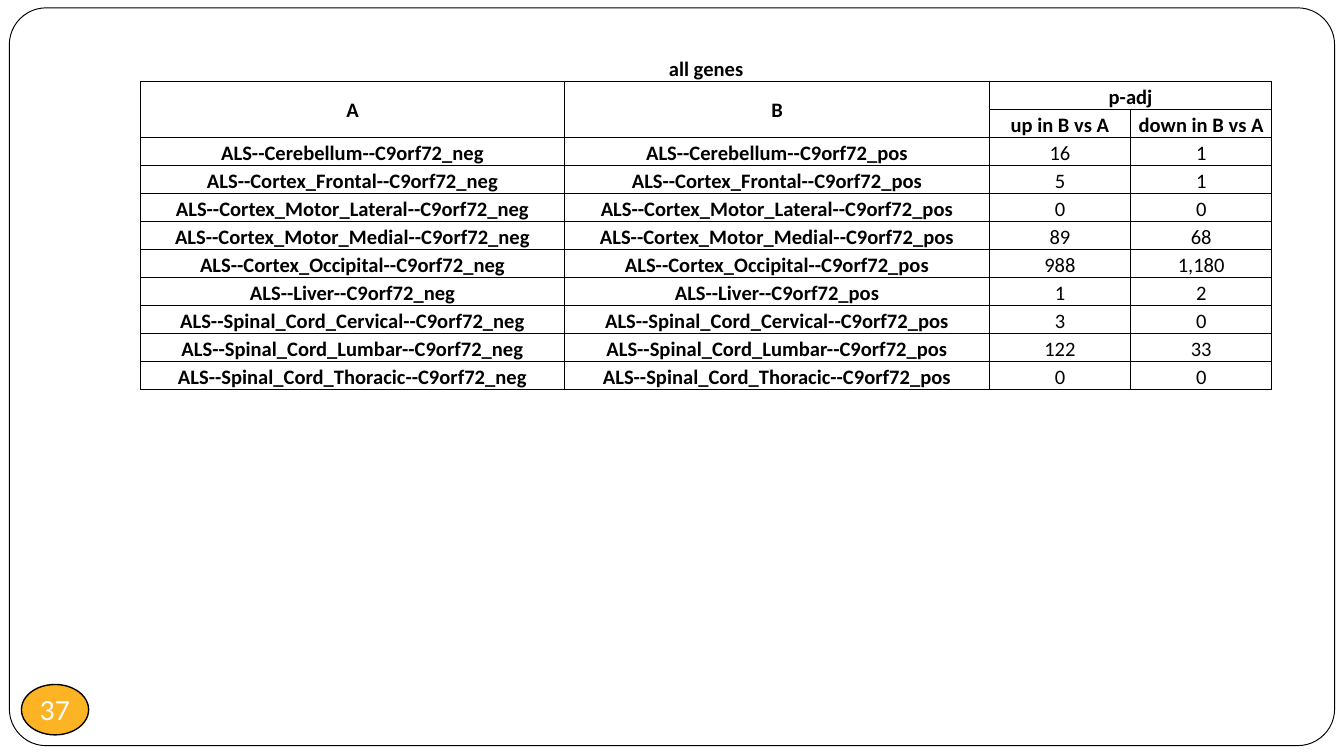
from lxml.etree import SubElement
from pptx import Presentation
from pptx.dml.color import RGBColor
from pptx.enum.shapes import MSO_SHAPE
from pptx.enum.text import MSO_ANCHOR, PP_ALIGN
from pptx.oxml.ns import qn
from pptx.util import Pt

COLORS = {"black": "000000", "white": "FFFFFF", "amber": "FCB424"}
REGIONS = [
    ("Cerebellum", "16", "1"),
    ("Cortex_Frontal", "5", "1"),
    ("Cortex_Motor_Lateral", "0", "0"),
    ("Cortex_Motor_Medial", "89", "68"),
    ("Cortex_Occipital", "988", "1,180"),
    ("Liver", "1", "2"),
    ("Spinal_Cord_Cervical", "3", "0"),
    ("Spinal_Cord_Lumbar", "122", "33"),
    ("Spinal_Cord_Thoracic", "0", "0"),
]
HEADER_ROWS = 3
ROW_HEIGHT = 15
COLUMN_WIDTHS = [227.4, 227.4, 75.7, 75.7]


def add_panel(kind, left, top, width, height, fill, line_width):
    shape = slide.shapes.add_shape(kind, Pt(left), Pt(top), Pt(width), Pt(height))
    shape.shadow.inherit = False
    shape.fill.solid()
    shape.fill.fore_color.rgb = RGBColor.from_string(COLORS[fill])
    shape.line.color.rgb = RGBColor.from_string(COLORS["black"])
    shape.line.width = Pt(line_width)
    return shape


def set_borders(cell, visible_sides):
    properties = cell._tc.get_or_add_tcPr()
    for side in "LRTB":
        line = SubElement(properties, qn(f"a:ln{side}"), w=str(Pt(0.5)))
        if side in visible_sides:
            fill = SubElement(line, qn("a:solidFill"))
            SubElement(fill, qn("a:srgbClr"), val=COLORS["black"])
        else:
            SubElement(line, qn("a:noFill"))


presentation = Presentation()
presentation.slide_width = Pt(720)
presentation.slide_height = Pt(405)
slide = presentation.slides.add_slide(presentation.slide_layouts[6])

# Rounded frame
frame = add_panel(MSO_SHAPE.ROUNDED_RECTANGLE, 5, 4.2, 710, 395.3, "white", 0.5)
frame.adjustments[0] = 0.05

# Page number
badge = add_panel(MSO_SHAPE.OVAL, 11.5, 366.7, 36, 27, "amber", 0.75)
text_frame = badge.text_frame
text_frame.margin_left = text_frame.margin_right = 0
text_frame.margin_top = text_frame.margin_bottom = 0
text_frame.word_wrap = False
text_frame.vertical_anchor = MSO_ANCHOR.MIDDLE
text_frame.text = "37"
paragraph = text_frame.paragraphs[0]
paragraph.alignment = PP_ALIGN.CENTER
font = paragraph.runs[0].font
font.name, font.size = "Lato", Pt(14)
font.color.rgb = RGBColor.from_string(COLORS["white"])

# Table contents
rows = [
    ["all genes", "", "", ""],
    ["A", "B", "p-adj", ""],
    ["", "", "up in B vs A", "down in B vs A"],
]
for region, up, down in REGIONS:
    rows.append([f"ALS--{region}--C9orf72_neg", f"ALS--{region}--C9orf72_pos", up, down])

# Table grid
table = slide.shapes.add_table(
    len(rows), len(COLUMN_WIDTHS), Pt(75.2), Pt(28.8),
    Pt(sum(COLUMN_WIDTHS)), Pt(ROW_HEIGHT * len(rows)),
).table
table.first_row = table.horz_banding = False
for column, width in zip(table.columns, COLUMN_WIDTHS):
    column.width = Pt(width)

# Cell text, borders and fill
for row_index, row in enumerate(rows):
    table.rows[row_index].height = Pt(ROW_HEIGHT)
    for column_index, text in enumerate(row):
        cell = table.cell(row_index, column_index)
        cell.margin_left = cell.margin_right = cell.margin_top = Pt(0.5)
        cell.margin_bottom = 0
        cell.vertical_anchor = MSO_ANCHOR.BOTTOM
        set_borders(cell, "B" if row_index == 0 else "LRTB")
        cell.fill.background()
        paragraph = cell.text_frame.paragraphs[0]
        paragraph.text = text
        paragraph.alignment = PP_ALIGN.CENTER
        font = paragraph.font
        if paragraph.runs:
            font = paragraph.runs[0].font
        font.name, font.size = "Calibri", Pt(11)
        font.bold = row_index < HEADER_ROWS or column_index < 2
        font.color.rgb = RGBColor.from_string(COLORS["black"])

# Merged headings
table.cell(0, 0).merge(table.cell(0, 3))
table.cell(1, 2).merge(table.cell(1, 3))
for column_index in range(2):
    heading = table.cell(1, column_index)
    heading.merge(table.cell(2, column_index))
    heading.vertical_anchor = MSO_ANCHOR.MIDDLE

presentation.save("out.pptx")
